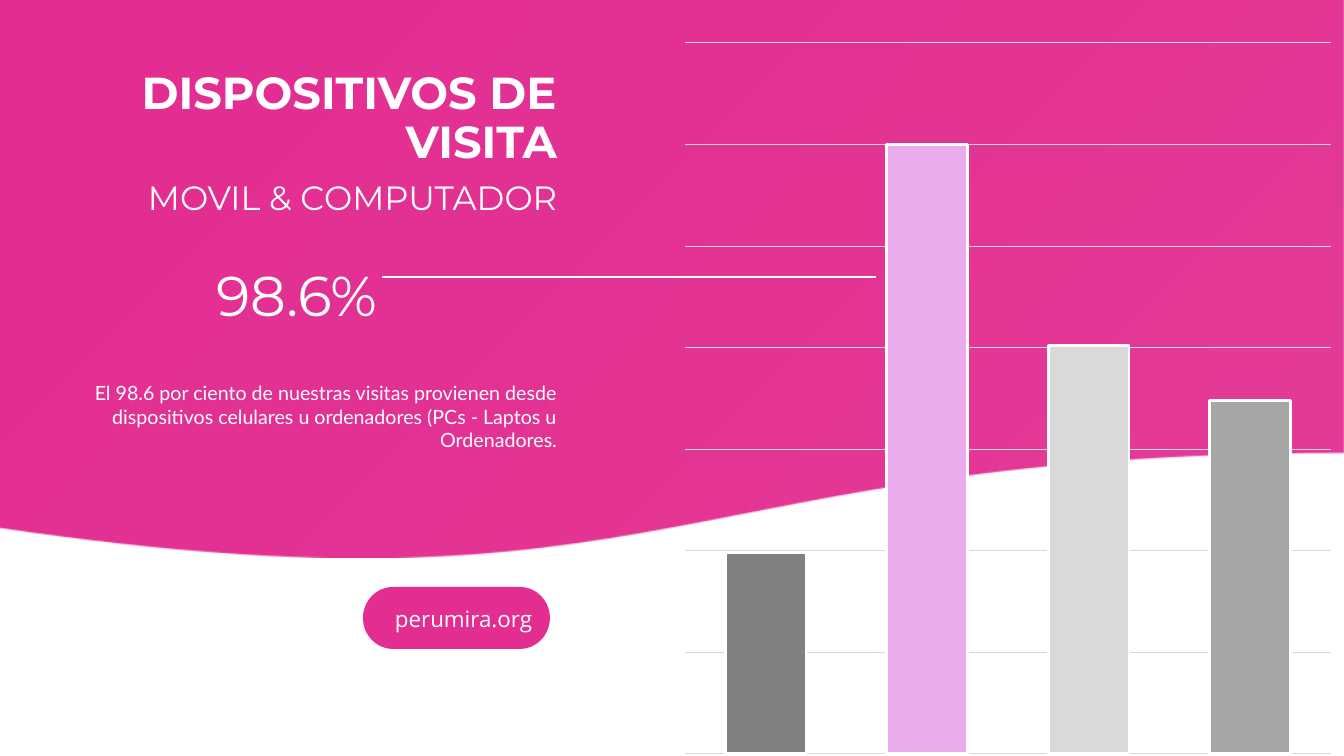
from dataclasses import dataclass

from lxml import etree
from pptx import Presentation
from pptx.chart.data import CategoryChartData
from pptx.dml.color import RGBColor
from pptx.enum.chart import XL_CHART_TYPE
from pptx.enum.shapes import MSO_CONNECTOR, MSO_SHAPE
from pptx.enum.text import MSO_ANCHOR, MSO_AUTO_SIZE, PP_ALIGN
from pptx.oxml import parse_xml
from pptx.oxml.ns import nsdecls, qn
from pptx.util import Emu, Pt

COLUMN = XL_CHART_TYPE.COLUMN_CLUSTERED
STRAIGHT = MSO_CONNECTOR.STRAIGHT
WAVE, PILL = MSO_SHAPE.FLOWCHART_DOCUMENT, MSO_SHAPE.FLOWCHART_TERMINATOR
TOP = MSO_ANCHOR.TOP
NO_FIT = MSO_AUTO_SIZE.NONE
LEFT, CENTER, RIGHT = PP_ALIGN.LEFT, PP_ALIGN.CENTER, PP_ALIGN.RIGHT

COLORS = {
    "pink": "E32D91",
    "white": "FFFFFF",
    "black": "000000",
    "grid": "D9D9D9",
}
BAR_UNIT = 16.67


@dataclass
class Box:
    x: int
    y: int
    w: int
    h: int


@dataclass
class Para:
    text: str
    font: str
    size: int
    align: PP_ALIGN
    bold: bool = False
    spacing: float = 1.0
    before: int = 0


@dataclass
class Bar:
    name: str
    value: int
    color: str


BARS = [
    Bar("1", 33, "808080"),
    Bar("2", 100, "E9ABEB"),
    Bar("3", 67, "D9D9D9"),
    Bar("4", 58, "A6A6A6"),
]
TITLE = [
    Para("DISPOSITIVOS DE VISITA", "Montserrat", 32, RIGHT, True, 0.9),
    Para("MOVIL & COMPUTADOR", "Montserrat", 24, RIGHT, False, 0.9, 10),
]
FIGURE = Para("98.6%", "Montserrat", 40, CENTER, spacing=1.5)
DETAIL = Para(
    "El 98.6 por ciento de nuestras visitas provienen desde dispositivos "
    "celulares u ordenadores (PCs - Laptos u Ordenadores.",
    "Lato", 14, RIGHT,
)
SITE = Para("perumira.org", "Open Sans", 16, LEFT)


def px(n: int) -> Emu:
    return Emu(round(n * 914400 / 100.8))


def rgb(name: str) -> RGBColor:
    return RGBColor.from_string(COLORS.get(name, name))


def place(box: Box) -> tuple:
    return px(box.x), px(box.y), px(box.w), px(box.h)


def set_attrs(target, values: dict) -> None:
    for name, value in values.items():
        setattr(target, name, value)


def write(tf, paras: list[Para], margins: dict | None = None) -> None:
    set_attrs(tf, {"word_wrap": True, "auto_size": NO_FIT, "vertical_anchor": TOP})
    set_attrs(tf, margins or {})
    for i, para in enumerate(paras):
        p = tf.paragraphs[0] if i == 0 else tf.add_paragraph()
        set_attrs(p, {
            "alignment": para.align,
            "line_spacing": para.spacing,
            "space_before": Pt(para.before),
        })
        r = p.add_run()
        r.text = para.text
        set_attrs(r.font, {"name": para.font, "size": Pt(para.size), "bold": para.bold})
        r.font.color.rgb = rgb("white")


def add_text(shapes, box: Box, para: Para, margins: dict | None = None) -> None:
    write(shapes.add_textbox(*place(box)).text_frame, [para], margins)


def add_plain_shape(shapes, kind: MSO_SHAPE, box: Box):
    sp = shapes.add_shape(kind, *place(box))
    sp.shadow.inherit = False
    sp.fill.solid()
    sp.fill.fore_color.rgb = rgb("pink")
    sp.line.fill.background()
    return sp


def add_wave(shapes, box: Box) -> None:
    sp = add_plain_shape(shapes, WAVE, box)
    sp.fill.gradient()
    sp.fill.gradient_angle = 315
    for stop, position in zip(sp.fill.gradient_stops, (0, 0.94)):
        stop.position = position
        stop.color.rgb = rgb("pink")
    last = sp._element.spPr.findall(".//" + qn("a:srgbClr"))[-1]
    etree.SubElement(last, qn("a:alpha")).set("val", "93000")


def set_plot_area(chart, box: Box, plot: Box) -> None:
    shares = {
        "x": (plot.x - box.x) / box.w,
        "y": (plot.y - box.y) / box.h,
        "w": plot.w / box.w,
        "h": plot.h / box.h,
    }
    modes = '<c:layoutTarget val="inner"/><c:xMode val="edge"/><c:yMode val="edge"/>'
    sizes = "".join(f'<c:{key} val="{share:.4f}"/>' for key, share in shares.items())
    area = chart._chartSpace.chart.plotArea
    for old in area.findall(qn("c:layout")):
        area.remove(old)
    area.insert(0, parse_xml(
        f"<c:layout {nsdecls('c')}><c:manualLayout>{modes}{sizes}"
        "</c:manualLayout></c:layout>"
    ))


def add_bars(shapes, box: Box, plot: Box, bars: list[Bar]) -> None:
    data = CategoryChartData()
    data.categories = [bar.name for bar in bars]
    data.add_series("Series 1", [bar.value for bar in bars])
    chart = shapes.add_chart(COLUMN, *place(box), data).chart
    set_attrs(chart, {"has_legend": False, "has_title": False})
    set_attrs(chart.font, {"name": "Calibri", "size": Pt(10)})
    chart.font.color.rgb = rgb("black")
    chart.category_axis.visible = False
    set_attrs(chart.value_axis, {
        "visible": False,
        "minimum_scale": 0,
        "maximum_scale": 7 * BAR_UNIT,
        "major_unit": BAR_UNIT,
        "has_major_gridlines": True,
    })
    grid = chart.value_axis.major_gridlines.format.line
    grid.color.rgb = rgb("grid")
    grid.width = Pt(0.75)
    set_attrs(chart.plots[0], {"gap_width": 100, "vary_by_categories": False})
    for i, bar in enumerate(bars):
        fmt = chart.plots[0].series[0].points[i].format
        fmt.fill.solid()
        fmt.fill.fore_color.rgb = rgb(bar.color)
        fmt.line.color.rgb = rgb("white")
        fmt.line.width = Pt(2)
    set_plot_area(chart, box, plot)


def add_pointer(shapes, x1: int, x2: int, y: int) -> None:
    line = shapes.add_connector(STRAIGHT, px(x1), px(y), px(x2), px(y))
    line.line.color.rgb = rgb("white")
    line.line.width = Pt(1.5)
    etree.SubElement(line._element.spPr, qn("a:effectLst"))


def main() -> None:
    prs = Presentation()
    set_attrs(prs, {"slide_width": px(1344), "slide_height": px(756)})
    s = prs.slides.add_slide(prs.slide_layouts[5])
    add_wave(s.shapes, Box(0, -2, 1344, 567))
    add_bars(s.shapes, Box(672, 28, 672, 741), Box(685, 43, 646, 711), BARS)
    add_text(s.shapes, Box(180, 222, 233, 112), FIGURE)
    add_pointer(s.shapes, 876, 382, 277)

    title = s.shapes.title
    spot = place(Box(85, 66, 482, 127))
    set_attrs(title, dict(zip(("left", "top", "width", "height"), spot)))
    write(title.text_frame, TITLE)
    s.shapes._spTree.append(title._element)

    add_text(s.shapes, Box(70, 376, 497, 130), DETAIL)
    button = s.shapes.add_group_shape().shapes
    add_plain_shape(button, PILL, Box(363, 587, 187, 62))
    sides = ("left", "top", "right", "bottom")
    add_text(button, Box(395, 605, 154, 27), SITE, {f"margin_{side}": 0 for side in sides})
    prs.save("out.pptx")


if __name__ == "__main__":
    main()
